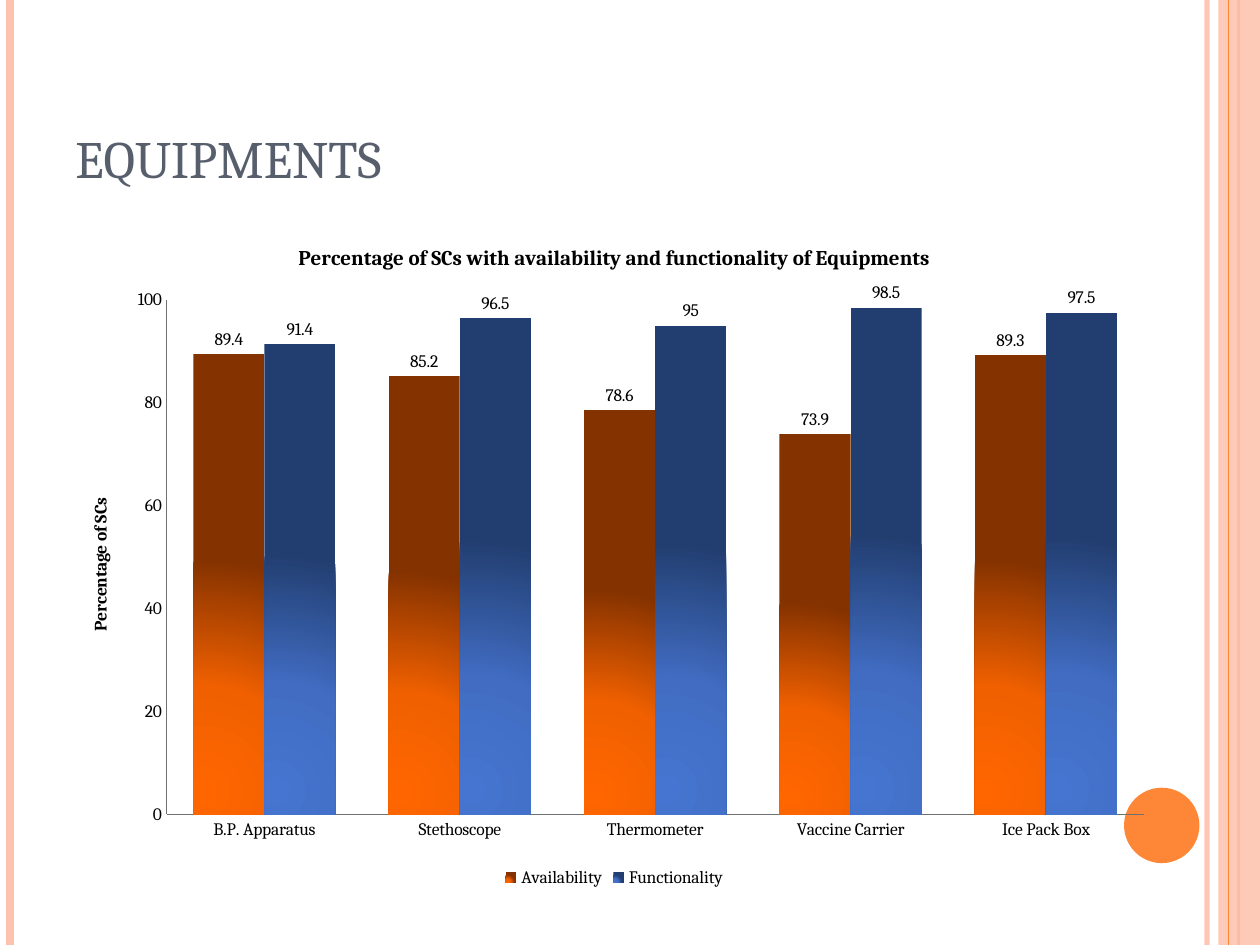
from dataclasses import dataclass

from lxml import etree
from pptx import Presentation
from pptx.chart.data import CategoryChartData
from pptx.dml.color import RGBColor
from pptx.enum.chart import XL_CHART_TYPE, XL_LABEL_POSITION, XL_LEGEND_POSITION, XL_TICK_MARK
from pptx.enum.shapes import MSO_CONNECTOR, MSO_SHAPE
from pptx.enum.text import MSO_ANCHOR
from pptx.oxml import parse_xml
from pptx.oxml.ns import nsdecls, qn
from pptx.util import Cm, Pt

COLUMNS = XL_CHART_TYPE.COLUMN_CLUSTERED
OUTSIDE = XL_LABEL_POSITION.OUTSIDE_END
BOTTOM = XL_LEGEND_POSITION.BOTTOM
NO_TICK = XL_TICK_MARK.NONE
STRAIGHT = MSO_CONNECTOR.STRAIGHT


@dataclass(frozen=True)
class Theme:
    font: str = "Cambria"
    accent: str = "FE8637"
    pale: str = "FEC3AE"
    heading: str = "575F6D"
    text: str = "000000"
    axis: str = "707070"
    heading_size: int = 30
    chart_title_size: int = 12
    chart_size: int = 10


theme = Theme()


def set_font(font, size, color, bold=False):
    font.name, font.size, font.bold = theme.font, Pt(size), bold
    font.color.rgb = RGBColor.from_string(color)


def set_alpha(color_format_parent, percent):
    """Make the solid colour below the given XML element partly transparent."""
    clr = next(color_format_parent.iter(qn("a:srgbClr")))
    etree.SubElement(clr, qn("a:alpha")).set("val", str(percent * 1000))


prs = Presentation()
prs.slide_width, prs.slide_height = Cm(25.4), Cm(19.05)
slide = prs.slides.add_slide(prs.slide_layouts[6])
shapes = slide.shapes

# Side stripes: x in cm, colour, width in points, opacity
stripes = [
    (24.33, theme.pale, 3, 93),
    (0.2, theme.pale, 4.5, 100),
    (24.97, theme.accent, 1.5, 100),
    (24.76, theme.accent, 0.75, 100),
]
for x, color, width, opacity in stripes:
    if x == 24.76:  # the band lies below the last stripe
        band = shapes.add_shape(MSO_SHAPE.RECTANGLE, Cm(24.56), 0, Cm(0.84), Cm(19.05))
        band.shadow.inherit = False
        band.fill.solid()
        band.fill.fore_color.rgb = RGBColor.from_string(theme.pale)
        set_alpha(band.fill._xPr.find(qn("a:solidFill")), 87)
        band.line.fill.background()
    stripe = shapes.add_connector(STRAIGHT, Cm(x), 0, Cm(x), Cm(19.05))
    stripe.line.color.rgb = RGBColor.from_string(color)
    stripe.line.width = Pt(width)
    sp_pr = stripe._element.spPr
    if opacity < 100:
        set_alpha(sp_pr, opacity)
    etree.SubElement(sp_pr, qn("a:effectLst"))

dot = shapes.add_shape(MSO_SHAPE.OVAL, Cm(22.66), Cm(15.88), Cm(1.52), Cm(1.52))
dot.shadow.inherit = False
dot.fill.solid()
dot.fill.fore_color.rgb = RGBColor.from_string(theme.accent)
dot.line.fill.background()

heading = shapes.add_textbox(Cm(1.27), Cm(0.76), Cm(20.75), Cm(3.18))
tf = heading.text_frame
tf.word_wrap = True
tf.vertical_anchor = MSO_ANCHOR.BOTTOM
p = tf.paragraphs[0]
p.text = "EQUIPMENTS"
set_font(p.font, theme.heading_size, theme.heading)

# Chart
data = CategoryChartData()
data.categories = ["B.P. Apparatus", "Stethoscope", "Thermometer", "Vaccine Carrier", "Ice Pack Box"]
data.add_series("Availability", [89.4, 85.2, 78.6, 73.9, 89.3])
data.add_series("Functionality", [91.4, 96.5, 95, 98.5, 97.5])
chart = shapes.add_chart(COLUMNS, Cm(1.27), Cm(4.45), Cm(22.23), Cm(13.54), data).chart
set_font(chart.font, theme.chart_size, theme.text)

value_axis, category_axis = chart.value_axis, chart.category_axis
titles = [
    (chart, "Percentage of SCs with availability and functionality of Equipments", theme.chart_title_size),
    (value_axis, "Percentage of SCs", theme.chart_size),
]
for owner, text, size in titles:
    title = owner.chart_title if owner is chart else owner.axis_title
    p = title.text_frame.paragraphs[0]
    p.text = text
    set_font(p.font, size, theme.text, bold=True)

value_axis.minimum_scale, value_axis.maximum_scale, value_axis.major_unit = 0, 100, 20
value_axis.has_major_gridlines = False
for axis in (value_axis, category_axis):
    axis.major_tick_mark = axis.minor_tick_mark = NO_TICK
    axis.format.line.color.rgb = RGBColor.from_string(theme.axis)

chart.has_legend = True
chart.legend.position = BOTTOM
chart.legend.include_in_layout = False

plot = chart.plots[0]
plot.gap_width, plot.overlap = 75, 0
plot.vary_by_categories = False
plot.has_data_labels = True
labels = plot.data_labels
labels.show_value = True
labels.position = OUTSIDE
set_font(labels.font, theme.chart_size, theme.text)

# Each column glows from its lower left corner
glows = [("FF6600", "F06000", "843200"), ("4575D0", "416CC2", "223E70")]
for series, colors in zip(plot.series, glows):
    stops = "".join(
        f'<a:gs pos="{pos}"><a:srgbClr val="{color}"/></a:gs>'
        for pos, color in zip((0, 45000, 100000), colors)
    )
    series.format.fill.background()
    sp_pr = series._element.spPr
    sp_pr.replace(sp_pr.find(qn("a:noFill")), parse_xml(
        f'<a:gradFill {nsdecls("a")} rotWithShape="1"><a:gsLst>{stops}</a:gsLst><a:path path="circle">'
        '<a:fillToRect l="15000" t="95000" r="85000" b="5000"/></a:path></a:gradFill>'))

# Fixed inner plot area, as shares of the chart
plot_area = chart._chartSpace.chart.plotArea
for old in plot_area.findall(qn("c:layout")):
    plot_area.remove(old)
plot_area.insert(0, parse_xml(
    f'<c:layout {nsdecls("c")}><c:manualLayout><c:layoutTarget val="inner"/>'
    '<c:xMode val="edge"/><c:yMode val="edge"/><c:x val="0.094"/><c:y val="0.118"/>'
    '<c:w val="0.886"/><c:h val="0.766"/></c:manualLayout></c:layout>'))

prs.save("out.pptx")
